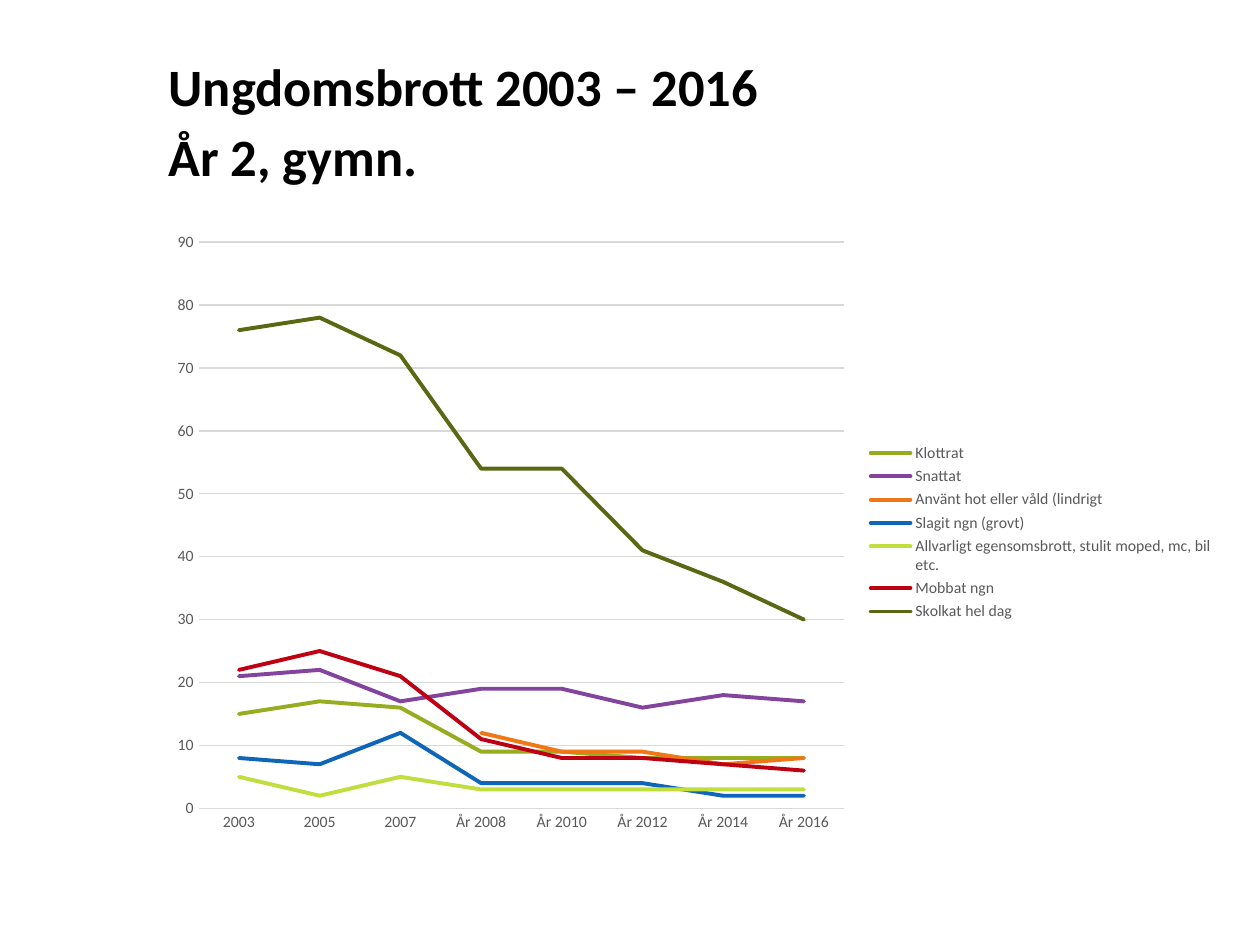
from pptx import Presentation
from pptx.chart.data import CategoryChartData
from pptx.dml.color import RGBColor
from pptx.enum.chart import XL_CHART_TYPE as ChartType, XL_LEGEND_POSITION as LegendPosition
from pptx.enum.chart import XL_MARKER_STYLE as Marker, XL_TICK_MARK as TickMark
from pptx.enum.text import MSO_ANCHOR as Anchor
from pptx.util import Pt


def color(value):
    return RGBColor.from_string(value)


def style_font(font, size, value):
    font.name = "Calibri"
    font.size = Pt(size)
    font.color.rgb = color(value)


deck = Presentation()
deck.slide_width, deck.slide_height = Pt(720), Pt(540)
page = deck.slides.add_slide(deck.slide_layouts[6])

left, width = Pt(89.3), Pt(611.3)
box = page.shapes.add_textbox(left, Pt(21.6), width, Pt(90))
frame = box.text_frame
frame.word_wrap = True
frame.vertical_anchor = Anchor.MIDDLE
para = frame.paragraphs[0]
para.line_spacing = Pt(40)
for index, line in enumerate(["Ungdomsbrott 2003 – 2016", "År 2, gymn."]):
    if index:
        para.add_line_break()
    span = para.add_run()
    span.text = line
    span.font.bold = True
    style_font(span.font, 30, "000000")

crimes = [
    ("Klottrat", "97AC1E", [15, 17, 16, 9, 9, 8, 8, 8]),
    ("Snattat", "83449D", [21, 22, 17, 19, 19, 16, 18, 17]),
    ("Använt hot eller våld (lindrigt", "F07717", [None, None, None, 12, 9, 9, 7, 8]),
    ("Slagit ngn (grovt)", "0F65B8", [8, 7, 12, 4, 4, 4, 2, 2]),
    ("Allvarligt egensomsbrott, stulit moped, mc, bil etc.", "C0DE3D", [5, 2, 5, 3, 3, 3, 3, 3]),
    ("Mobbat ngn", "BD0012", [22, 25, 21, 11, 8, 8, 7, 6]),
    ("Skolkat hel dag", "5B6712", [76, 78, 72, 54, 54, 41, 36, 30]),
]
data = CategoryChartData()
data.categories = ["2003", "2005", "2007", "År 2008", "År 2010", "År 2012", "År 2014", "År 2016"]
for name, shade, values in crimes:
    data.add_series(name, values)

chart = page.shapes.add_chart(ChartType.LINE, left, Pt(126), width, Pt(356.4), data).chart
chart.has_title = False
style_font(chart.font, 10, "000000")
chart.has_legend = True
chart.legend.position = LegendPosition.RIGHT
chart.legend.include_in_layout = False
style_font(chart.legend.font, 9, "595959")

plot = chart.plots[0]
plot.vary_by_categories = False
for series, (name, shade, values) in zip(plot.series, crimes):
    series.smooth = False
    series.marker.style = Marker.NONE
    series.format.line.width = Pt(2.25)
    series.format.line.color.rgb = color(shade)
for stroke in chart.element.xpath(".//c:ser/c:spPr/a:ln"):
    stroke.set("cap", "rnd")

for axis in (chart.category_axis, chart.value_axis):
    axis.major_tick_mark = axis.minor_tick_mark = TickMark.NONE
    style_font(axis.tick_labels.font, 9, "595959")
chart.value_axis.minimum_scale = 0
chart.value_axis.maximum_scale = 90
chart.value_axis.major_unit = 10
chart.value_axis.format.line.fill.background()
for rule in (chart.category_axis.format.line, chart.value_axis.major_gridlines.format.line):
    rule.width = Pt(0.75)
    rule.color.rgb = color("D9D9D9")

deck.save("out.pptx")
